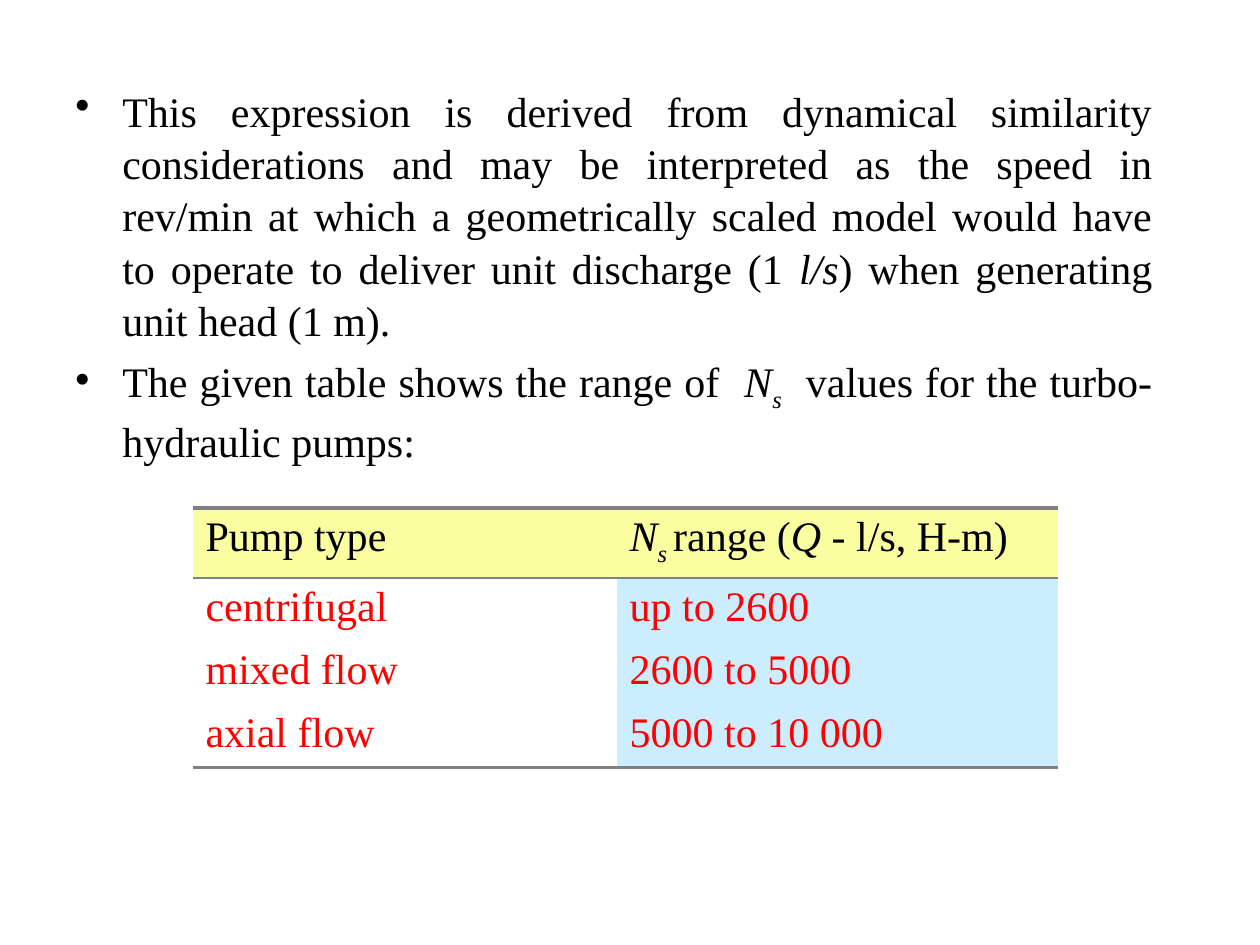
from pptx import Presentation
from pptx.dml.color import RGBColor
from pptx.enum.text import PP_ALIGN
from pptx.oxml import parse_xml
from pptx.oxml.ns import nsdecls
from pptx.util import Pt

PX = 914400 // 126  # one px in EMU
RED, BLACK, GREY = "FF0000", "000000", "808080"
YELLOW, BLUE = "FAFEA0", "CCECFF"


def color(value):
    return RGBColor.from_string(value)


def write(p, runs, ink):
    """Fill a paragraph with (text, style) runs: i = italic, s = italic subscript."""
    p.font.size = Pt(24)
    p.font.name = "Times New Roman"
    p.font.color.rgb = color(ink)
    p.alignment = PP_ALIGN.JUSTIFY
    for text, style in runs:
        r = p.add_run()
        r.text = text
        if style:
            r.font.italic = True
        if style == "s":
            r.font._element.set("baseline", "-25000")


prs = Presentation()
prs.slide_width, prs.slide_height = 1260 * PX, 945 * PX
s = prs.slides.add_slide(prs.slide_layouts[6])

# Bulleted text
bullets = [
    [("This expression is derived from dynamical similarity considerations and "
      "may be interpreted as the speed in rev/min at which a geometrically scaled "
      "model would have to operate to deliver unit discharge (1 ", ""),
     ("l/s", "i"), (") when generating unit head (1 m).", "")],
    [("The given table shows the range of  ", ""), ("N", "i"), ("s", "s"),
     ("  values for the turbo-hydraulic pumps:", "")],
]
tf = s.shapes.add_textbox(63 * PX, 77 * PX, 1102 * PX, 416 * PX).text_frame
tf.word_wrap = True
for i, runs in enumerate(bullets):
    p = tf.paragraphs[0] if i == 0 else tf.add_paragraph()
    write(p, runs, BLACK)
    p.line_spacing = 1.04
    p.space_before = Pt(4.8)
    pPr = p._p.get_or_add_pPr()
    pPr.set("marL", str(47 * PX))
    pPr.set("indent", str(-47 * PX))
    bullet = parse_xml(f'<a:buChar {nsdecls("a")} char="•"/>')
    pPr.insert_element_before(bullet, "a:tabLst", "a:defRPr", "a:extLst")

# Pump table
rows = [
    ([("Pump type", "")],
     [("N", "i"), ("s ", "s"), ("range (", ""), ("Q", "i"), (" - l/s, H-m)", "")]),
    ([("centrifugal", "")], [("up to 2600", "")]),
    ([("mixed flow", "")], [("2600 to 5000", "")]),
    ([("axial flow", "")], [("5000 to 10 000", "")]),
]
widths, heights = [424, 441], [65, 63, 63, 63]
rules = [2, 1, 0, 0, 2]  # line width above each row, then below the last
table = s.shapes.add_table(4, 2, 193 * PX, 508 * PX,
                           sum(widths) * PX, sum(heights) * PX).table
table.first_row = table.horz_banding = False
for column, width in zip(table.columns, widths):
    column.width = width * PX
for i, (row, height) in enumerate(zip(rows, heights)):
    table.rows[i].height = height * PX
    for j, runs in enumerate(row):
        cell = table.cell(i, j)
        write(cell.text_frame.paragraphs[0], runs, RED if i else BLACK)
        fill = YELLOW if i == 0 else BLUE if j else None
        if fill:
            cell.fill.solid()
            cell.fill.fore_color.rgb = color(fill)
        else:
            cell.fill.background()
        # Borders come before the fill in the cell properties
        sides = {"lnL": 0, "lnR": 0, "lnT": rules[i], "lnB": rules[i + 1]}
        for k, (side, width) in enumerate(sides.items()):
            paint = (f'<a:solidFill><a:srgbClr val="{GREY}"/></a:solidFill>'
                     if width else "<a:noFill/>")
            line = parse_xml(f'<a:{side} {nsdecls("a")} w="{Pt(width)}">{paint}</a:{side}>')
            cell._tc.get_or_add_tcPr().insert(k, line)

prs.save("out.pptx")
